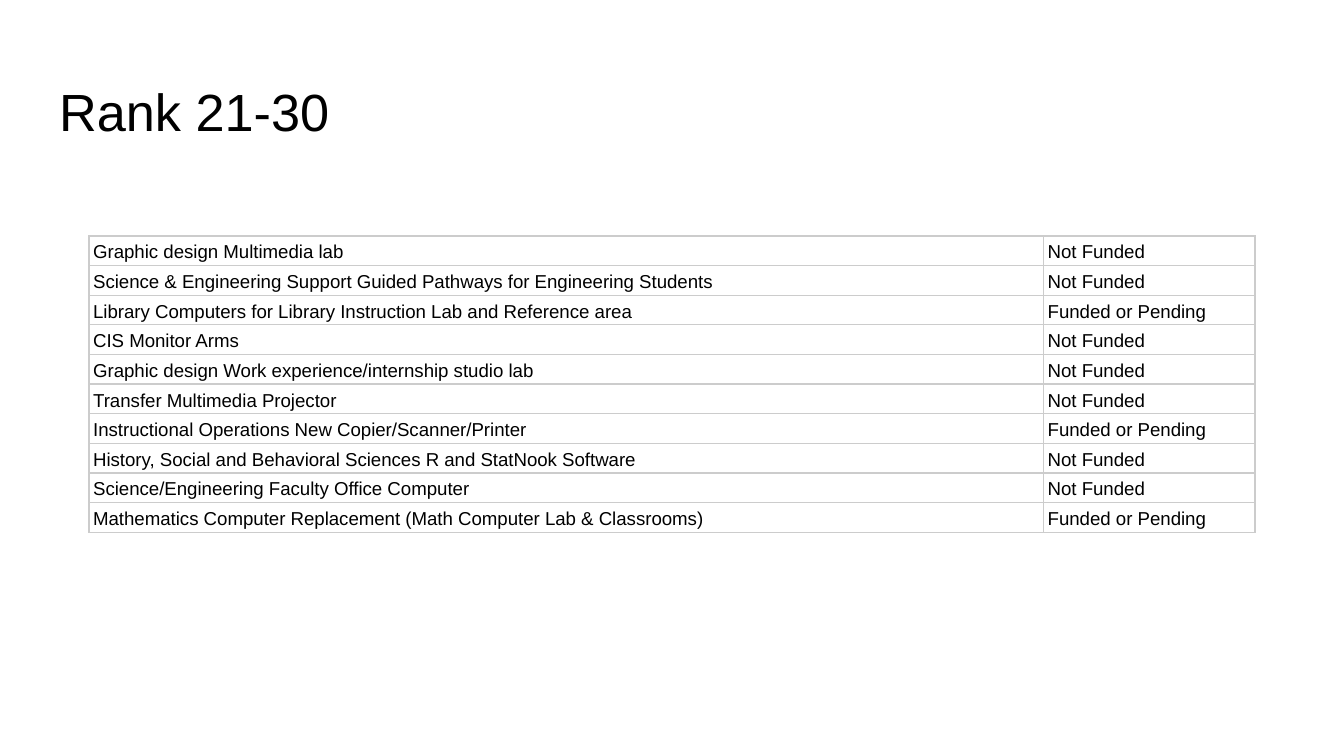
from lxml import etree
from pptx import Presentation
from pptx.dml.color import RGBColor
from pptx.enum.text import MSO_ANCHOR
from pptx.oxml.ns import qn
from pptx.util import Cm, Pt

MIDDLE = MSO_ANCHOR.MIDDLE
BOTTOM = MSO_ANCHOR.BOTTOM

BLACK = RGBColor(0x00, 0x00, 0x00)
GREY = RGBColor(0xCC, 0xCC, 0xCC)
FONT = "Arial"
BLANK_LAYOUT = 6

FUNDED = "Funded or Pending"
NOT_FUNDED = "Not Funded"
REQUESTS = [
    ("Graphic design Multimedia lab", NOT_FUNDED),
    ("Science & Engineering Support Guided Pathways for Engineering Students", NOT_FUNDED),
    ("Library Computers for Library Instruction Lab and Reference area", FUNDED),
    ("CIS Monitor Arms", NOT_FUNDED),
    ("Graphic design Work experience/internship studio lab", NOT_FUNDED),
    ("Transfer Multimedia Projector", NOT_FUNDED),
    ("Instructional Operations New Copier/Scanner/Printer", FUNDED),
    ("History, Social and Behavioral Sciences R and StatNook Software", NOT_FUNDED),
    ("Science/Engineering Faculty Office Computer", NOT_FUNDED),
    ("Mathematics Computer Replacement (Math Computer Lab & Classrooms)", FUNDED),
]


def write(frame, text, *, size, color=BLACK, font=FONT, spacing=1.15):
    paragraph = frame.paragraphs[0]
    paragraph.line_spacing = spacing
    run = paragraph.add_run()
    run.text = text
    run.font.name = font
    run.font.size = Pt(size)
    run.font.color.rgb = color


def set_borders(cell, color, width):
    """Draw all four sides of a cell; call before the cell gets its fill."""
    properties = cell._tc.get_or_add_tcPr()
    for side in ("a:lnL", "a:lnR", "a:lnT", "a:lnB"):
        line = etree.SubElement(properties, qn(side), w=str(Pt(width)))
        fill = etree.SubElement(line, qn("a:solidFill"))
        etree.SubElement(fill, qn("a:srgbClr"), val=str(color))


class SlideBuilder:
    def __init__(self, slide, title_size=28, table_size=10):
        self.slide = slide
        self.title_size = title_size
        self.table_size = table_size

    def title(self, text, left, top, width, height):
        heading = self.slide.shapes.add_textbox(Cm(left), Cm(top), Cm(width), Cm(height))
        frame = heading.text_frame
        frame.word_wrap = True
        frame.vertical_anchor = MIDDLE
        frame.margin_left = frame.margin_right = Cm(0.25)
        frame.margin_top = frame.margin_bottom = Cm(0.25)
        write(frame, text, size=self.title_size)

    def table(self, rows, left, top, column_widths, row_height):
        table = self.slide.shapes.add_table(
            len(rows), len(column_widths), Cm(left), Cm(top),
            Cm(sum(column_widths)), Cm(row_height * len(rows))).table
        table.first_row = table.horz_banding = False
        for column, width in zip(table.columns, column_widths):
            column.width = Cm(width)
        for row, texts in zip(table.rows, rows):
            for cell, text in zip(row.cells, texts):
                self.cell(cell, text)

    def cell(self, cell, text):
        set_borders(cell, GREY, 0.75)
        cell.fill.background()
        cell.vertical_anchor = BOTTOM
        cell.margin_left = cell.margin_right = Cm(0.08)
        cell.margin_top = Cm(0.02)
        cell.margin_bottom = Cm(0.05)
        write(cell.text_frame, text, size=self.table_size)


def main():
    deck = Presentation()
    deck.slide_width, deck.slide_height = Cm(25.4), Cm(14.29)
    builder = SlideBuilder(deck.slides.add_slide(deck.slide_layouts[BLANK_LAYOUT]))
    builder.title("Rank 21-30", 0.87, 1.2, 23.67, 1.6)
    builder.table(REQUESTS, 1.68, 4.46, (18.04, 4), 0.56)
    deck.save("out.pptx")


if __name__ == "__main__":
    main()
